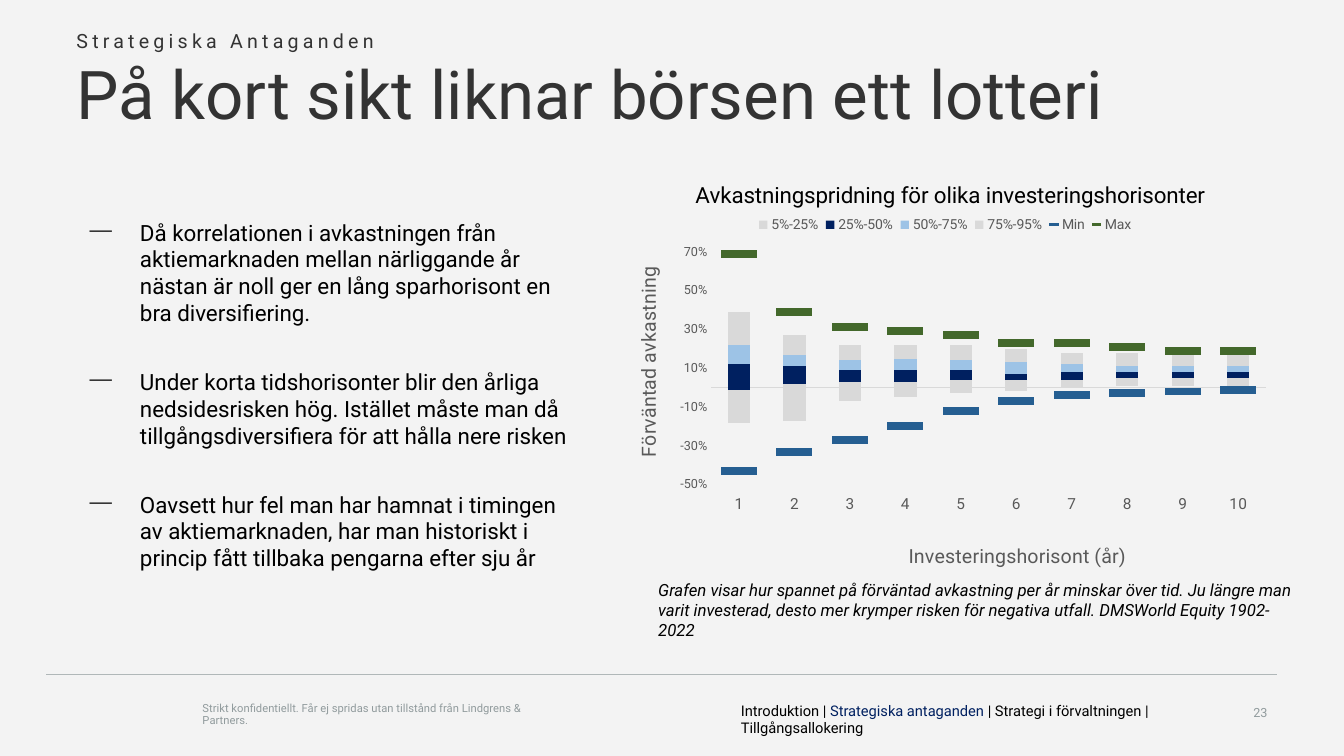
import pptx
import pptx.chart.data
import pptx.dml.color
import pptx.enum.chart
import pptx.enum.shapes
import pptx.enum.text
import pptx.oxml
import pptx.oxml.ns
import pptx.util
from pptx.util import Inches

COLORS = {"bg": "F3F3F3", "heading": "333333", "text": "000000", "muted": "919B9D",
          "rule": "B0B7B8", "axis": "595959", "axis_line": "D9D9D9", "grey": "D9D9D9",
          "navy": "002060", "sky": "9DC3E6", "brown": "9E480E", "min": "255E91", "max": "43682B"}
RGB = {name: pptx.dml.color.RGBColor.from_string(value) for name, value in COLORS.items()}
QN = pptx.oxml.ns.qn
NSDECLS = pptx.oxml.ns.nsdecls


def set_font(font, size, color, italic=False):
    for name, value in {"name": "Roboto", "size": pptx.util.Pt(size),
                        "bold": False, "italic": italic}.items():
        setattr(font, name, value)
    font.color.rgb = RGB[color]


def add_text(box, paragraphs, size, italic=False, **formats):
    """Add a text box; each paragraph is a list of (text, colour) runs."""
    tf = s.shapes.add_textbox(*map(Inches, box)).text_frame
    tf.word_wrap = True
    for i, runs in enumerate(paragraphs):
        p = tf.paragraphs[0] if i == 0 else tf.add_paragraph()
        for name, value in formats.items():
            setattr(p, name, value)
        for text, color in runs:
            r = p.add_run()
            r.text = text
            set_font(r.font, size, color, italic)
    return tf


prs = pptx.Presentation()
prs.slide_width, prs.slide_height = Inches(13.33), Inches(7.5)
s = prs.slides.add_slide(prs.slide_layouts[6])
s.background.fill.solid()
s.background.fill.fore_color.rgb = RGB["bg"]

# Headings
tf = add_text((0.66, 0.26, 4.14, 0.3), [[("Strategiska Antaganden", "heading")]], 14, line_spacing=0.9)
tf.paragraphs[0].runs[0].font._element.set("spc", "300")
add_text((0.66, 0.56, 12.28, 1.55), [[("På kort sikt liknar börsen ett lotteri", "heading")]],
         48, line_spacing=0.9)

# Bullets
points = [
    "Då korrelationen i avkastningen från aktiemarknaden mellan närliggande år nästan är noll "
    "ger en lång sparhorisont en bra diversifiering.",
    "Under korta tidshorisonter blir den årliga nedsidesrisken hög. Istället måste man då "
    "tillgångsdiversifiera för att hålla nere risken",
    "Oavsett hur fel man har hamnat i timingen av aktiemarknaden, har man historiskt i princip "
    "fått tillbaka pengarna efter sju år",
]
tf = add_text((0.79, 2.12, 4.96, 4.06), [[(point, "text")] for point in points], 16)
for i, p in enumerate(tf.paragraphs):
    if i:
        p.space_before = pptx.util.Pt(30)
    pPr = p._p.get_or_add_pPr()
    pPr.set("marL", str(Inches(0.5)))
    pPr.set("indent", str(Inches(-0.5)))
    for xml in (f'<a:buClr {NSDECLS("a")}><a:srgbClr val="{COLORS["heading"]}"/></a:buClr>',
                f'<a:buChar {NSDECLS("a")} char="—"/>'):
        pPr.append(pptx.oxml.parse_xml(xml))

# Chart: stacked return bands, with the extremes as dash markers
bands = [
    ("Series 1", None, [0, 0, 0, 0, 0, 0, 0, 0.01, 0.01, 0.01]),
    ("5%-25%", "grey", [0, 0.02, 0.03, 0.03, 0.04, 0.04, 0.04, 0.04, 0.04, 0.04]),
    ("25%-50%", "navy", [0.12, 0.09, 0.06, 0.06, 0.05, 0.03, 0.04, 0.03, 0.03, 0.03]),
    ("50%-75%", "sky", [0.1, 0.06, 0.05, 0.06, 0.05, 0.06, 0.04, 0.03, 0.03, 0.03]),
    ("75%-95%", "grey", [0.17, 0.1, 0.08, 0.07, 0.08, 0.07, 0.06, 0.07, 0.06, 0.06]),
    ("Series 6", None, [0] * 10),
    ("Series 7", "grey", [0] * 10),
    ("Series 8", "brown", [0] * 10),
    ("Series 9", "navy", [-0.01] + [0] * 9),
    ("Series 10", "grey", [-0.17, -0.17, -0.07, -0.05, -0.03, -0.02, 0, 0, 0, 0]),
]
extremes = [
    ("Min", "min", [-0.43, -0.33, -0.27, -0.2, -0.12, -0.07, -0.04, -0.03, -0.02, -0.01]),
    ("Max", "max", [0.69, 0.39, 0.31, 0.29, 0.27, 0.23, 0.23, 0.21, 0.19, 0.19]),
]
data = pptx.chart.data.CategoryChartData(number_format="0%")
data.categories = [str(year) for year in range(1, 11)]
for name, color, values in bands + extremes:
    data.add_series(name, values)
chart = s.shapes.add_chart(pptx.enum.chart.XL_CHART_TYPE.COLUMN_STACKED, Inches(6.06), Inches(1.55),
                           Inches(6.63), Inches(4.15), data).chart
set_font(chart.font, 10, "text")

bars = chart.plots[0]
for name, value in {"gap_width": 150, "overlap": 100, "vary_by_categories": False}.items():
    setattr(bars, name, value)
bar_xml = chart._chartSpace.find(".//" + QN("c:barChart"))
line_xml = pptx.oxml.parse_xml(
    f'<c:lineChart {NSDECLS("c")}><c:grouping val="standard"/><c:varyColors val="0"/>'
    '<c:marker val="1"/></c:lineChart>')
for ser in bar_xml.findall(QN("c:ser"))[len(bands):]:
    for invert in ser.findall(QN("c:invertIfNegative")):
        ser.remove(invert)
    line_xml.find(QN("c:marker")).addprevious(ser)
for axis_id in bar_xml.findall(QN("c:axId")):
    line_xml.append(pptx.oxml.parse_xml(f'<c:axId {NSDECLS("c")} val="{axis_id.get("val")}"/>'))
bar_xml.addnext(line_xml)

for series, (name, color, values) in zip(bars.series, bands):
    series.invert_if_negative = False
    if color:
        series.format.fill.solid()
        series.format.fill.fore_color.rgb = RGB[color]
    else:
        series.format.fill.background()
for series, (name, color, values) in zip(chart.plots[1].series, extremes):
    series.smooth = False
    series.format.line.fill.background()
    series.marker.style = pptx.enum.chart.XL_MARKER_STYLE.DASH
    series.marker.size = 25
    series.marker.format.fill.solid()
    series.marker.format.fill.fore_color.rgb = RGB[color]
    series.marker.format.line.fill.background()

years, returns = chart.category_axis, chart.value_axis
for axis, size in ((years, 11), (returns, 9)):
    axis.has_major_gridlines = False
    axis.major_tick_mark = axis.minor_tick_mark = pptx.enum.chart.XL_TICK_MARK.NONE
    set_font(axis.tick_labels.font, size, "axis")
years.tick_label_position = pptx.enum.chart.XL_TICK_LABEL_POSITION.LOW
years.format.line.color.rgb = RGB["axis_line"]
years.format.line.width = pptx.util.Pt(0.75)
returns.format.line.fill.background()
for name, value in {"minimum_scale": -0.5, "maximum_scale": 0.7, "major_unit": 0.2}.items():
    setattr(returns, name, value)
returns.tick_labels.number_format = "0%"
returns.tick_labels.number_format_is_linked = False

for title, text, size, color in (
        (chart.chart_title, "Avkastningspridning för olika investeringshorisonter", 16, "text"),
        (years.axis_title, "Investeringshorisont (år)", 14, "axis"),
        (returns.axis_title, "Förväntad avkastning", 14, "axis")):
    title.text_frame.text = text
    set_font(title.text_frame.paragraphs[0].runs[0].font, size, color)
returns.axis_title.text_frame._txBody.find(QN("a:bodyPr")).set("rot", "-5400000")

chart.has_legend = True
chart.legend.position = pptx.enum.chart.XL_LEGEND_POSITION.TOP
chart.legend.include_in_layout = False
set_font(chart.legend.font, 10, "axis")
legend_xml = chart._chartSpace.find(".//" + QN("c:legend"))
hidden = [i for i, band in enumerate(bands) if band[0].startswith("Series")]
for position, i in enumerate(hidden, start=1):
    legend_xml.insert(position, pptx.oxml.parse_xml(
        f'<c:legendEntry {NSDECLS("c")}><c:idx val="{i}"/><c:delete val="1"/></c:legendEntry>'))

# Chart parts, placed as fractions of the chart
plot_xml = bar_xml.getparent()
chart_title, year_title, return_title = chart._chartSpace.iter(QN("c:title"))
for part, places in ((chart_title, {"x": 0.12, "y": 0.05}),
                     (year_title, {"x": 0.44, "y": 0.92}),
                     (return_title, {"x": 0.03, "y": 0.26}),
                     (legend_xml, {"x": 0.21, "y": 0.14, "w": 0.58, "h": 0.05}),
                     (plot_xml, {"x": 0.15, "y": 0.23, "w": 0.83, "h": 0.56})):
    for old in part.findall(QN("c:layout")):
        part.remove(old)
    inner = '<c:layoutTarget val="inner"/>' if part is plot_xml else ""
    modes = "".join(f'<c:{key}Mode val="edge"/>' for key in "xy")
    sizes = "".join(f'<c:{key} val="{value}"/>' for key, value in places.items())
    layout = pptx.oxml.parse_xml(f'<c:layout {NSDECLS("c")}><c:manualLayout>{inner}{modes}{sizes}'
                                 '</c:manualLayout></c:layout>')
    before = [child for child in part
              if child.tag in (QN("c:tx"), QN("c:legendPos"), QN("c:legendEntry"))]
    part.insert(len(before), layout)

add_text((6.43, 5.7, 6.58, 0.5), [[(
    "Grafen visar hur spannet på förväntad avkastning per år minskar över tid. Ju längre man varit "
    "investerad, desto mer krymper risken för negativa utfall. DMSWorld Equity 1902-2022", "text")]],
    12, italic=True)

# Footer
rule = s.shapes.add_connector(pptx.enum.shapes.MSO_CONNECTOR.STRAIGHT,
                              Inches(0.46), Inches(6.69), Inches(12.67), Inches(6.69))
rule.line.color.rgb = RGB["rule"]
rule.line.width = pptx.util.Pt(0.25)
rule._element.spPr.append(pptx.oxml.parse_xml(f'<a:effectLst {NSDECLS("a")}/>'))
tf = add_text((1.91, 6.98, 3.61, 0.22), [[(
    "Strikt konfidentiellt. Får ej spridas utan tillstånd från Lindgrens & Partners.", "muted")]],
    8, line_spacing=0.9)
tf.vertical_anchor = pptx.enum.text.MSO_ANCHOR.MIDDLE
add_text((7.25, 6.91, 5.36, 0.28), [[("Introduktion | ", "text"), ("Strategiska antaganden ", "navy"),
                                    ("| Strategi i förvaltningen | Tillgångsallokering", "text")]], 10.5)
add_text((11.96, 6.94, 0.71, 0.4), [[("23", "muted")]], 9, alignment=pptx.enum.text.PP_ALIGN.RIGHT)

prs.save("out.pptx")
